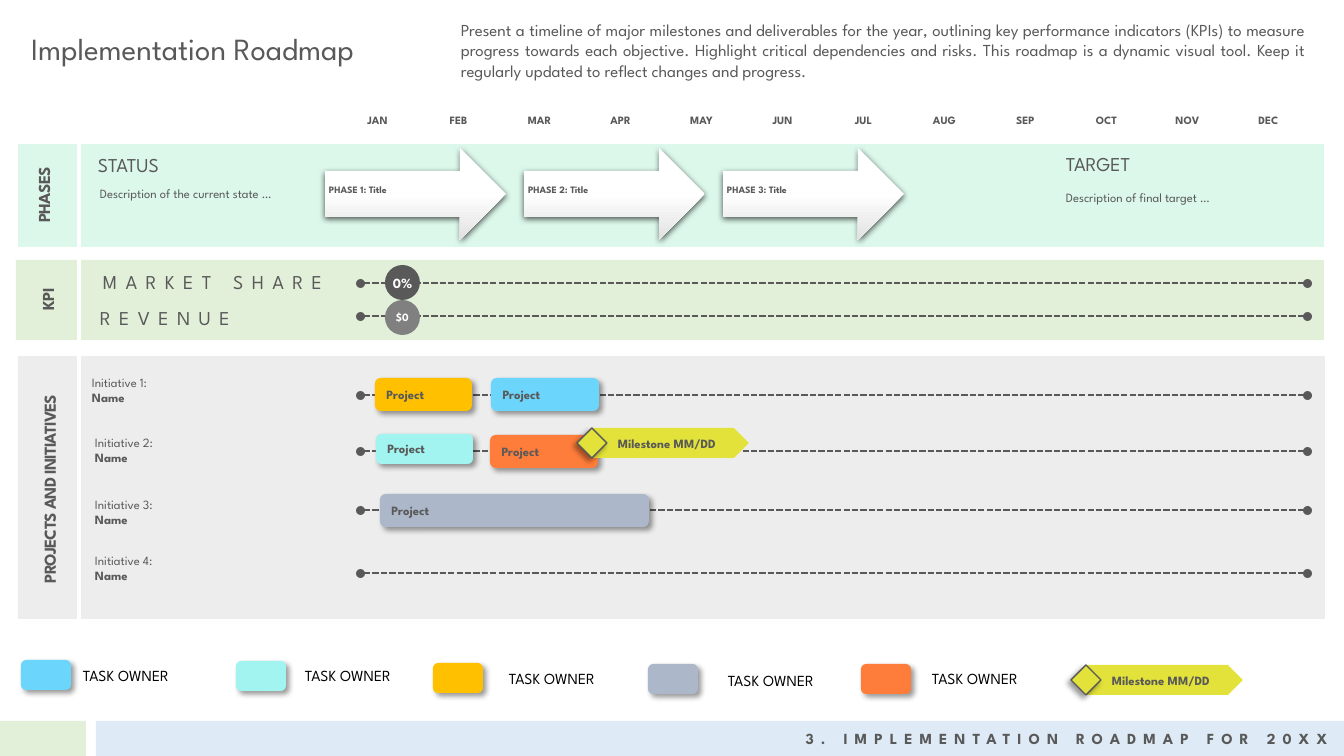
from lxml.etree import SubElement
from pptx import Presentation
from pptx.dml.color import RGBColor
from pptx.enum.dml import MSO_LINE
from pptx.enum.shapes import MSO_CONNECTOR, MSO_SHAPE
from pptx.enum.text import MSO_ANCHOR, MSO_AUTO_SIZE, PP_ALIGN
from pptx.oxml.ns import qn
from pptx.util import Pt

PX = 12192000 / 1344
FONT = "League Spartan"

INK = RGBColor(0x59, 0x59, 0x59)
GREY = RGBColor(0x80, 0x80, 0x80)
SHADE = RGBColor(0xE1, 0xE1, 0xE1)
WHITE = RGBColor(0xFF, 0xFF, 0xFF)
BLACK = RGBColor(0x00, 0x00, 0x00)
MINT = RGBColor(0xDC, 0xF8, 0xEB)
SAGE = RGBColor(0xE2, 0xF0, 0xD9)
MIST = RGBColor(0xED, 0xED, 0xED)
PALE = RGBColor(0xDE, 0xEB, 0xF7)
SKY = RGBColor(0x6C, 0xD5, 0xFC)
AQUA = RGBColor(0xA1, 0xF4, 0xEF)
GOLD = RGBColor(0xFF, 0xC0, 0x00)
STEEL = RGBColor(0xAC, 0xB8, 0xCA)
CORAL = RGBColor(0xFF, 0x7D, 0x3A)
LIME = RGBColor(0xE2, 0xE2, 0x3A)

TITLE = "Implementation Roadmap"
INTRO = (
    "Present a timeline of major milestones and deliverables for the year, "
    "outlining key performance indicators (KPIs) to measure progress towards "
    "each objective. Highlight critical dependencies and risks. This roadmap "
    "is a dynamic visual tool. Keep it regularly updated to reflect changes "
    "and progress."
)
FOOTER = "3. IMPLEMENTATION ROADMAP FOR 20XX"
MONTHS = "JAN FEB MAR APR MAY JUN JUL AUG SEP OCT NOV DEC".split()
BANDS = [  # box, fill, label, label box before its quarter turn
    ((16, 260, 1308, 80), SAGE, "KPI", (10, 284, 75, 30)),
    ((18, 356, 1307, 263), MIST, "PROJECTS AND INITIATIVES", (-84, 474, 266, 30)),
    ((18, 144, 1306, 103), MINT, "PHASES", (-4, 180, 95, 30)),
]
TRACKS = [283, 316, 395, 451, 510, 573]
HEADS = [  # text, box, size, letter gap
    ("MARKET SHARE", (93, 265, 276, 34), 14, 6),
    ("REVENUE", (90, 301, 276, 34), 14, 6),
    ("STATUS", (88, 148, 276, 34), 14, None),
    ("Description of the current state …", (90, 181, 253, 25), 9, None),
    ("TARGET", (1056, 147, 268, 34), 14, None),
    ("Description of final target …", (1056, 185, 247, 25), 9, None),
]
STEPS = [(82, 370), (85, 430), (85, 492), (85, 548)]
BADGES = [("0%", 265, INK, 10), ("$0", 300, GREY, 8)]
PHASES = ["PHASE 1: Title", "PHASE 2: Title", "PHASE 3: Title"]
TASKS = [
    ((375, 378, 97, 33), GOLD),
    ((491, 378, 108, 33), SKY),
    ((376, 434, 97, 30), AQUA),
    ((380, 494, 269, 33), STEEL),
    ((490, 435, 108, 33), CORAL),
]
OWNERS = [  # fill, swatch left and top, text left and top
    (SKY, 21, 660, 73, 661),
    (AQUA, 236, 661, 295, 661),
    (GOLD, 433, 663, 499, 664),
    (STEEL, 648, 664, 718, 666),
    (CORAL, 861, 664, 922, 664),
]
MARKS = [(577, 428), (1071, 665)]

prs = Presentation()
prs.slide_width, prs.slide_height = round(1344 * PX), round(756 * PX)
slide = prs.slides.add_slide(prs.slide_layouts[5])
shapes = slide.shapes


def emu(*px):
    return [round(n * PX) for n in px]


def write(frame, text, size=9, color=INK, bold=False, align=PP_ALIGN.LEFT,
          anchor=MSO_ANCHOR.TOP, gap=None, inset=None, lead=None):
    """Fill a text frame; each line of text becomes a paragraph."""
    frame.word_wrap = True
    frame.vertical_anchor = anchor
    if inset is not None:
        frame.margin_left = frame.margin_right = 0
        frame.margin_top = frame.margin_bottom = round(inset * PX)
    for i, line in enumerate(text.split("\n")):
        para = frame.paragraphs[0] if i == 0 else frame.add_paragraph()
        para.alignment = align
        if lead:
            para.line_spacing = lead
        run = para.add_run()
        run.text = line
        font = run.font
        font.name, font.size, font.bold = FONT, Pt(size), bold or i > 0
        font.color.rgb = color
        if gap:
            run._r.get_or_add_rPr().set("spc", str(int(gap * 100)))


def label(text, box, turn=0, grow=True, **style):
    item = shapes.add_textbox(*emu(*box))
    item.rotation = turn
    write(item.text_frame, text, **style)
    if grow:
        item.text_frame.auto_size = MSO_AUTO_SIZE.SHAPE_TO_FIT_TEXT


def draw(kind, box, fill, shade=None):
    """Add a shape; shade is opacity %, blur pt, distance pt, angle."""
    item = shapes.add_shape(kind, *emu(*box))
    item.fill.solid()
    item.fill.fore_color.rgb = fill
    item.line.fill.background()
    item.shadow.inherit = False
    if shade:
        alpha, blur, dist, angle = shade
        cast = SubElement(
            item._element.spPr.find(qn("a:effectLst")), qn("a:outerShdw"),
            blurRad=str(Pt(blur)), dist=str(Pt(dist)),
            dir=str(angle * 60000), algn="ctr", rotWithShape="0")
        tint = SubElement(cast, qn("a:srgbClr"), val="000000")
        SubElement(tint, qn("a:alpha"), val=str(alpha * 1000))
    return item


def rule(x1, y1, x2, y2, color, width, dash=None):
    item = shapes.add_connector(MSO_CONNECTOR.STRAIGHT, *emu(x1, y1, x2, y2))
    item.line.color.rgb, item.line.width = color, Pt(width)
    if dash:
        item.line.dash_style = dash
    SubElement(item._element.spPr, qn("a:effectLst"))


def block(box, fill):
    item = draw(MSO_SHAPE.ROUNDED_RECTANGLE, box, fill, (40, 4, 3, 45))
    item.adjustments[0] = 0.17
    return item


def months():
    table = shapes.add_table(1, len(MONTHS), *emu(337, 110, 972, 23)).table
    table.first_row = table.horz_banding = False
    for cell, name in zip(table.rows[0].cells, MONTHS):
        cell.fill.solid()
        cell.fill.fore_color.rgb = WHITE
        cell.vertical_anchor = MSO_ANCHOR.MIDDLE
        write(cell.text_frame, name, size=8, bold=True, align=PP_ALIGN.CENTER,
              anchor=MSO_ANCHOR.MIDDLE)


def phase(text, x, y):
    arrow = draw(MSO_SHAPE.RIGHT_ARROW, (x, y, 181, 92), WHITE, (63, 4.5, 1.5, 90))
    arrow.fill.gradient()
    arrow.fill.gradient_angle = 270
    for stop, spot, color in zip(arrow.fill.gradient_stops, (0.5, 1), (WHITE, SHADE)):
        stop.position, stop.color.rgb = spot, color
    label(text, (x + 4, y + 29, 139, 27), grow=False, size=7, bold=True,
          anchor=MSO_ANCHOR.MIDDLE, inset=8, lead=0.9)


def mark(x, y):
    flag = draw(MSO_SHAPE.PENTAGON, (x + 15, y, 157, 30), LIME)
    write(flag.text_frame, "Milestone MM/DD", bold=True,
          align=PP_ALIGN.CENTER, anchor=MSO_ANCHOR.MIDDLE)
    gem = draw(MSO_SHAPE.DIAMOND, (x, y, 30, 30), LIME, (40, 4, 3, 135))
    gem.line.color.rgb, gem.line.width = INK, Pt(1)


title = shapes.title
title.left, title.top, title.width, title.height = emu(21, 25, 428, 47)
write(title.text_frame, TITLE, size=22)
title.text_frame.auto_size = MSO_AUTO_SIZE.SHAPE_TO_FIT_TEXT
label(INTRO, (451, 15, 865, 72), size=12, align=PP_ALIGN.JUSTIFY)
months()

for box, fill, *_ in BANDS:
    draw(MSO_SHAPE.RECTANGLE, box, fill)
rule(79, 99, 79, 754, WHITE, 3)
for *_, name, box in BANDS:
    label(name, box, turn=270, size=12, bold=True, align=PP_ALIGN.CENTER, gap=-0.5)
for y in TRACKS:
    rule(364, y, 1310, y, INK, 1.5, MSO_LINE.SQUARE_DOT)
    for x in (356, 1303):
        draw(MSO_SHAPE.OVAL, (x, y - 4, 9, 9), INK)
for text, box, size, gap in HEADS:
    label(text, box, size=size, gap=gap)
for i, (x, y) in enumerate(STEPS, 1):
    label(f"Initiative {i}:\nName", (x, y, 261, 40))
for text, y, fill, size in BADGES:
    badge = draw(MSO_SHAPE.OVAL, (385, y, 35, 35), fill)
    write(badge.text_frame, text, size=size, color=WHITE, bold=True, inset=0,
          align=PP_ALIGN.CENTER, anchor=MSO_ANCHOR.MIDDLE)
for i, text in enumerate(PHASES):
    phase(text, 325 + 199 * i, 148)
for box, fill in TASKS:
    write(block(box, fill).text_frame, "Project", bold=True, anchor=MSO_ANCHOR.MIDDLE)
for fill, x, y, left, top in OWNERS:
    block((x, y, 50, 30), fill)
    label("TASK OWNER", (left, top, 125, 29), size=11, color=BLACK)
for spot in MARKS:
    mark(*spot)

draw(MSO_SHAPE.RECTANGLE, (0, 721, 86, 35), SAGE)
draw(MSO_SHAPE.RECTANGLE, (96, 721, 1248, 35), PALE)
label(FOOTER, (123, 724, 1215, 29), size=11, bold=True, align=PP_ALIGN.RIGHT, gap=5)

prs.save("out.pptx")
